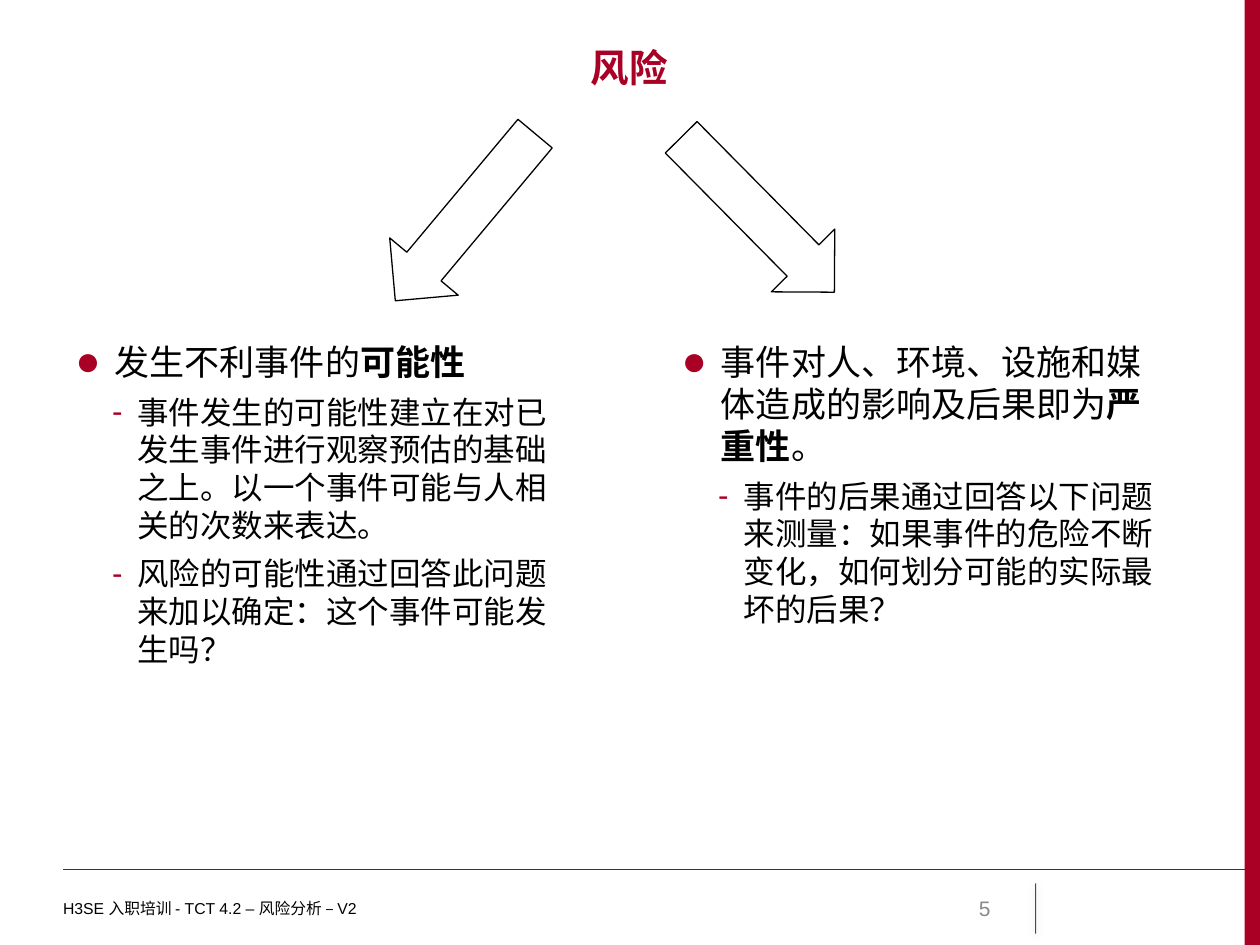
from dataclasses import dataclass

from lxml.etree import SubElement
from pptx import Presentation
from pptx.dml.color import RGBColor
from pptx.enum.shapes import MSO_CONNECTOR as Connector, MSO_SHAPE as Shape
from pptx.enum.text import MSO_ANCHOR as Anchor, PP_ALIGN as Align
from pptx.oxml.ns import qn
from pptx.util import Pt


@dataclass(frozen=True)
class Theme:
    font: str = "Arial"
    band: str = "AA0025"
    accent: str = "A90025"
    ink: str = "000000"
    muted: str = "898989"
    title: int = 22
    point: int = 20
    detail: int = 18
    number: int = 12
    footer: int = 9


@dataclass(frozen=True)
class Bullet:
    char: str
    size: int
    margin: float
    hanging: float
    scale: int = 100


THEME = Theme()
BULLETS = [
    Bullet("●", THEME.point, 22.5, 22.5, 120),
    Bullet("-", THEME.detail, 35.5, 14.5),
]

# Each paragraph: outline level, then (wording, bold) pieces
LIKELIHOOD = [
    (0, [("发生不利事件的", False), ("可能性", True)]),
    (1, [("事件发生的可能性建立在对已发生事件进行观察预估的基础之上。"
          "以一个事件可能与人相关的次数来表达。", False)]),
    (1, [("风险的可能性通过回答此问题来加以确定：这个事件可能发生吗？", False)]),
]
SEVERITY = [
    (0, [("事件对人、环境、设施和媒体造成的影响及后果即为", False),
         ("严重性", True), ("。", False)]),
    (1, [("事件的后果通过回答以下问题来测量："
          "如果事件的危险不断变化，如何划分可能的实际最坏的后果？", False)]),
]


def add_node(parent, tag, **attributes):
    return SubElement(parent, qn(tag), {k: str(v) for k, v in attributes.items()})


class SlideBuilder:
    def __init__(self, slide, theme):
        self.slide = slide
        self.theme = theme

    def style(self, font, size, color, bold=False):
        font.name = self.theme.font
        font.size = Pt(size)
        font.bold = bold
        font.color.rgb = RGBColor.from_string(color)

    def frame(self, left, top, width, height, anchor=Anchor.TOP):
        box = self.slide.shapes.add_textbox(Pt(left), Pt(top), Pt(width), Pt(height))
        frame = box.text_frame
        frame.word_wrap = True
        frame.vertical_anchor = anchor
        return frame

    def label(self, text, bounds, size, color, align=Align.LEFT,
              anchor=Anchor.MIDDLE, bold=False, inset=7.2):
        frame = self.frame(*bounds, anchor)
        frame.margin_left = Pt(inset)
        frame.text = text
        paragraph = frame.paragraphs[0]
        paragraph.alignment = align
        self.style(paragraph.runs[0].font, size, color, bold)

    def bullet(self, paragraph, level):
        rule = BULLETS[level]
        paragraph.level = level
        properties = paragraph._p.get_or_add_pPr()
        properties.set("marL", str(Pt(rule.margin)))
        properties.set("indent", str(-Pt(rule.hanging)))
        color = add_node(properties, "a:buClr")
        add_node(color, "a:srgbClr", val=self.theme.accent)
        add_node(properties, "a:buSzPct", val=rule.scale * 1000)
        add_node(properties, "a:buFont", typeface=self.theme.font)
        add_node(properties, "a:buChar", char=rule.char)

    def outline(self, paragraphs, bounds):
        frame = self.frame(*bounds)
        for index, (level, pieces) in enumerate(paragraphs):
            paragraph = frame.add_paragraph() if index else frame.paragraphs[0]
            self.bullet(paragraph, level)
            paragraph.space_before = Pt(3 if index else 0)
            paragraph.space_after = Pt(3)
            for wording, bold in pieces:
                run = paragraph.add_run()
                run.text = wording
                self.style(run.font, BULLETS[level].size, self.theme.ink, bold)

    def band(self, left, top, width, height):
        band = self.slide.shapes.add_shape(
            Shape.RECTANGLE, Pt(left), Pt(top), Pt(width), Pt(height))
        band.shadow.inherit = False
        band.fill.solid()
        band.fill.fore_color.rgb = RGBColor.from_string(self.theme.band)
        band.line.fill.background()

    def arrow(self, left, top, rotation):
        arrow = self.slide.shapes.add_shape(
            Shape.LEFT_ARROW, Pt(left), Pt(top), Pt(124.5), Pt(51))
        arrow.rotation = rotation
        arrow.shadow.inherit = False
        arrow.fill.background()
        arrow.line.color.rgb = RGBColor.from_string(self.theme.ink)
        arrow.line.width = Pt(0.75)

    def rule(self, start, end, color, width):
        """Draw a straight line and return its empty effect list."""
        line = self.slide.shapes.add_connector(
            Connector.STRAIGHT, *map(Pt, start), *map(Pt, end))
        line.line.color.rgb = RGBColor.from_string(color)
        line.line.width = Pt(width)
        return line, add_node(line._element.spPr, "a:effectLst")

    def soft_rule(self, start, end):
        """Draw a translucent line with a soft shadow below it."""
        line, effects = self.rule(start, end, self.theme.ink, 0.5)
        stroke = line._element.spPr.find(".//" + qn("a:srgbClr"))
        add_node(stroke, "a:alpha", val=70000)
        shadow = add_node(effects, "a:outerShdw", blurRad=Pt(5), dist=Pt(1.6),
                          dir=5400000, rotWithShape=0)
        color = add_node(shadow, "a:srgbClr", val=self.theme.ink)
        add_node(color, "a:alpha", val=38000)


def main():
    presentation = Presentation()
    presentation.slide_width, presentation.slide_height = Pt(720), Pt(540)
    slide = presentation.slides.add_slide(presentation.slide_layouts[6])
    builder = SlideBuilder(slide, THEME)

    margin = 36
    footer_top, footer_height = 504.75, 28.8
    builder.band(711.2, 0, 8.8, 540)
    builder.rule((margin, 496.8), (720, 496.8), THEME.band, 0.75)
    builder.soft_rule((591.8, footer_top), (591.8, footer_top + footer_height))

    builder.label("风险", (margin, 21.6, 647.3, 49.7), THEME.title, THEME.accent,
                  Align.CENTER, Anchor.TOP, bold=True)
    for left, paragraphs in ((margin, LIKELIHOOD), (382.4, SEVERITY)):
        builder.outline(paragraphs, (left, 190.8, 290.2, 283.7))
    builder.arrow(203.6, 98.6, 309.9)
    builder.arrow(370.8, 97.2, 225.3)

    builder.label("5", (516.2, footer_top, 56.9, footer_height),
                  THEME.number, THEME.muted, Align.RIGHT)
    builder.label("H3SE 入职培训 - TCT 4.2 – 风险分析 – V2",
                  (margin, footer_top, 437.8, footer_height),
                  THEME.footer, THEME.ink, inset=0)
    presentation.save("out.pptx")


if __name__ == "__main__":
    main()
